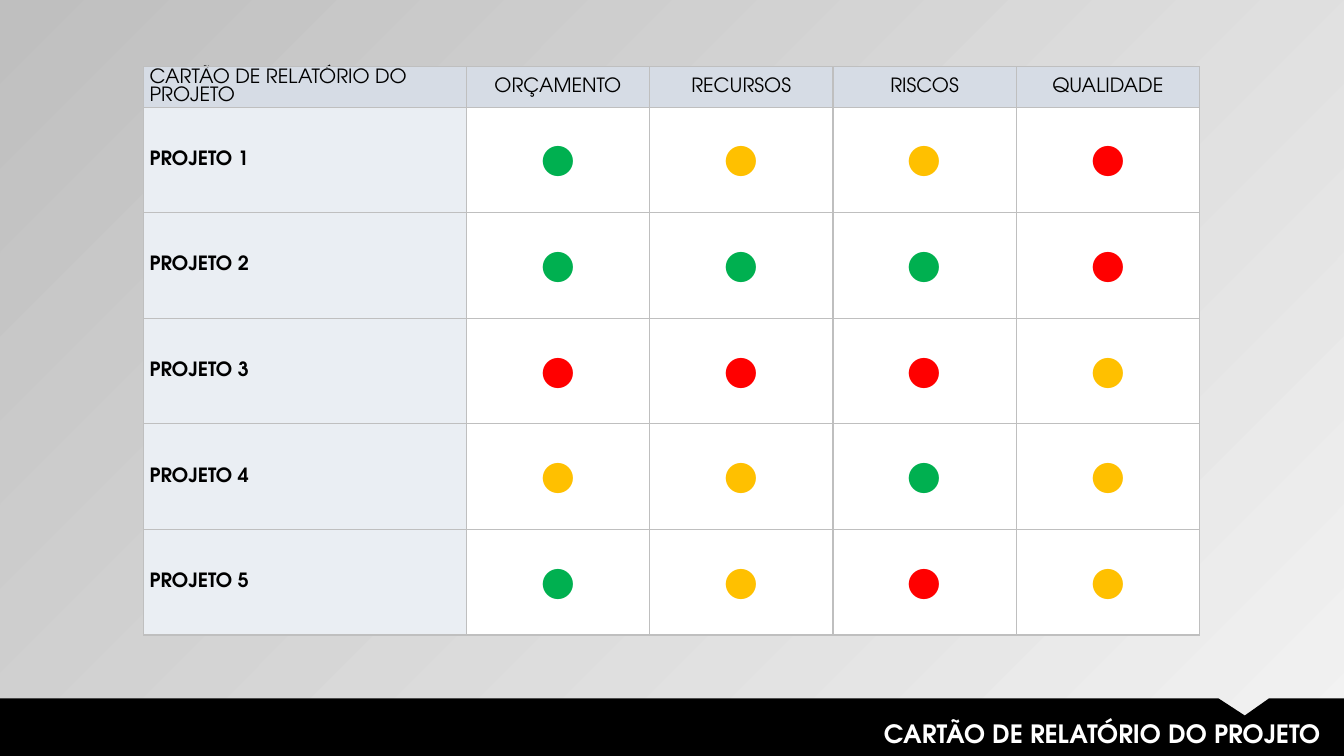
from pptx import Presentation
from pptx.dml.color import RGBColor
from pptx.enum.text import MSO_ANCHOR, MSO_AUTO_SIZE, PP_ALIGN
from pptx.oxml import parse_xml
from pptx.oxml.ns import nsdecls
from pptx.util import Cm, Pt

LEFT, CENTER, RIGHT = PP_ALIGN.LEFT, PP_ALIGN.CENTER, PP_ALIGN.RIGHT
MIDDLE = MSO_ANCHOR.MIDDLE
NO_AUTOFIT = MSO_AUTO_SIZE.NONE
TITLE_ONLY = 5

WIDTH, HEIGHT = 33.87, 19.05
BAND_TOP = 17.6
HEADING = "CARTÃO DE RELATÓRIO DO PROJETO"
CRITERIA = ["ORÇAMENTO", "RECURSOS", "RISCOS", "QUALIDADE"]
# One letter per criterion: G on track, Y caution, R critical
RATINGS = ["GYYR", "GGGR", "RRRY", "YYGY", "GYRY"]
STATUS_COLORS = {"G": "00B050", "Y": "FFC000", "R": "FF0000"}


def color(hex_value):
    return RGBColor.from_string(hex_value)


class ReportCard:
    font = "TeX Gyre Adventor"
    black, white, border = "000000", "FFFFFF", "BFBFBF"
    header_fill, project_fill = "D6DCE5", "EAEEF3"

    def __init__(self, slide):
        self.slide = slide

    def background(self, start, end, angle):
        fill = self.slide.background.fill
        fill.gradient()
        fill.gradient_angle = angle
        for stop, hex_value in zip(fill.gradient_stops, (start, end)):
            stop.color.rgb = color(hex_value)

    def band(self, points):
        outline = [(Cm(x), Cm(y)) for x, y in points]
        builder = self.slide.shapes.build_freeform(*outline[0])
        builder.add_line_segments(outline[1:], close=True)
        band = builder.convert_to_shape()
        band.shadow.inherit = False
        band.fill.solid()
        band.fill.fore_color.rgb = color(self.black)
        band.line.fill.background()

    def label(self, frame, text, size, hex_value, bold=False, align=LEFT):
        paragraph = frame.paragraphs[0]
        paragraph.alignment = align
        run = paragraph.add_run()
        run.text = text
        style = {"name": self.font, "size": Pt(size), "bold": bold}
        for attribute, value in style.items():
            setattr(run.font, attribute, value)
        run.font.color.rgb = color(hex_value)

    def title(self, text, left, top, width, height):
        title = self.slide.shapes.title
        place = {"left": left, "top": top, "width": width, "height": height}
        for attribute, value in place.items():
            setattr(title, attribute, Cm(value))
        frame = title.text_frame
        layout = {"word_wrap": True, "auto_size": NO_AUTOFIT, "vertical_anchor": MIDDLE}
        for attribute, value in layout.items():
            setattr(frame, attribute, value)
        self.label(frame, text, 18, self.white, True, RIGHT)
        # Bring the title in front of the band
        self.slide.shapes._spTree.append(title._element)

    def table(self, left, top, widths, heights):
        table = self.slide.shapes.add_table(
            len(heights), len(widths), Cm(left), Cm(top),
            Cm(sum(widths)), Cm(sum(heights))).table
        for column, width in zip(table.columns, widths):
            column.width = Cm(width)
        for row, height in zip(table.rows, heights):
            row.height = Cm(height)
        return table

    def cell(self, cell, fill, text, size=14, hex_value=black, **style):
        margins = {"margin_left": Cm(0.15), "margin_right": Cm(0.15),
                   "margin_top": 0, "margin_bottom": 0, "vertical_anchor": MIDDLE}
        for attribute, value in margins.items():
            setattr(cell, attribute, value)
        self.label(cell.text_frame, text, size, hex_value, **style)
        # Borders come before the fill in the cell properties
        properties = cell._tc.get_or_add_tcPr()
        for side in ("lnL", "lnR", "lnT", "lnB"):
            properties.append(parse_xml(
                f'<a:{side} {nsdecls("a")} w="{Pt(1)}"><a:solidFill>'
                f'<a:srgbClr val="{self.border}"/></a:solidFill></a:{side}>'))
        cell.fill.solid()
        cell.fill.fore_color.rgb = color(fill)


def main():
    deck = Presentation()
    deck.slide_width, deck.slide_height = Cm(WIDTH), Cm(HEIGHT)
    card = ReportCard(deck.slides.add_slide(deck.slide_layouts[TITLE_ONLY]))

    # Background and notched footer band
    card.background("F2F2F2", "BFBFBF", 135)
    card.band([(0, BAND_TOP), (30.71, BAND_TOP), (31.37, 18.03), (31.98, BAND_TOP),
               (WIDTH, BAND_TOP), (WIDTH, HEIGHT), (0, HEIGHT)])

    # Status table
    table = card.table(3.62, 1.68, [8.13] + [4.62] * len(CRITERIA),
                       [1.02] + [2.66] * len(RATINGS))
    card.cell(table.cell(0, 0), card.header_fill, HEADING)
    for column, criterion in enumerate(CRITERIA, 1):
        card.cell(table.cell(0, column), card.header_fill, criterion, align=CENTER)
    for row, ratings in enumerate(RATINGS, 1):
        card.cell(table.cell(row, 0), card.project_fill, f"PROJETO {row}", bold=True)
        for column, rating in enumerate(ratings, 1):
            card.cell(table.cell(row, column), card.white, "•", 60,
                      STATUS_COLORS[rating], align=CENTER)

    # Title on the band
    card.title(HEADING, 10.52, 17.98, 23.01, 1.02)
    deck.save("out.pptx")


if __name__ == "__main__":
    main()
